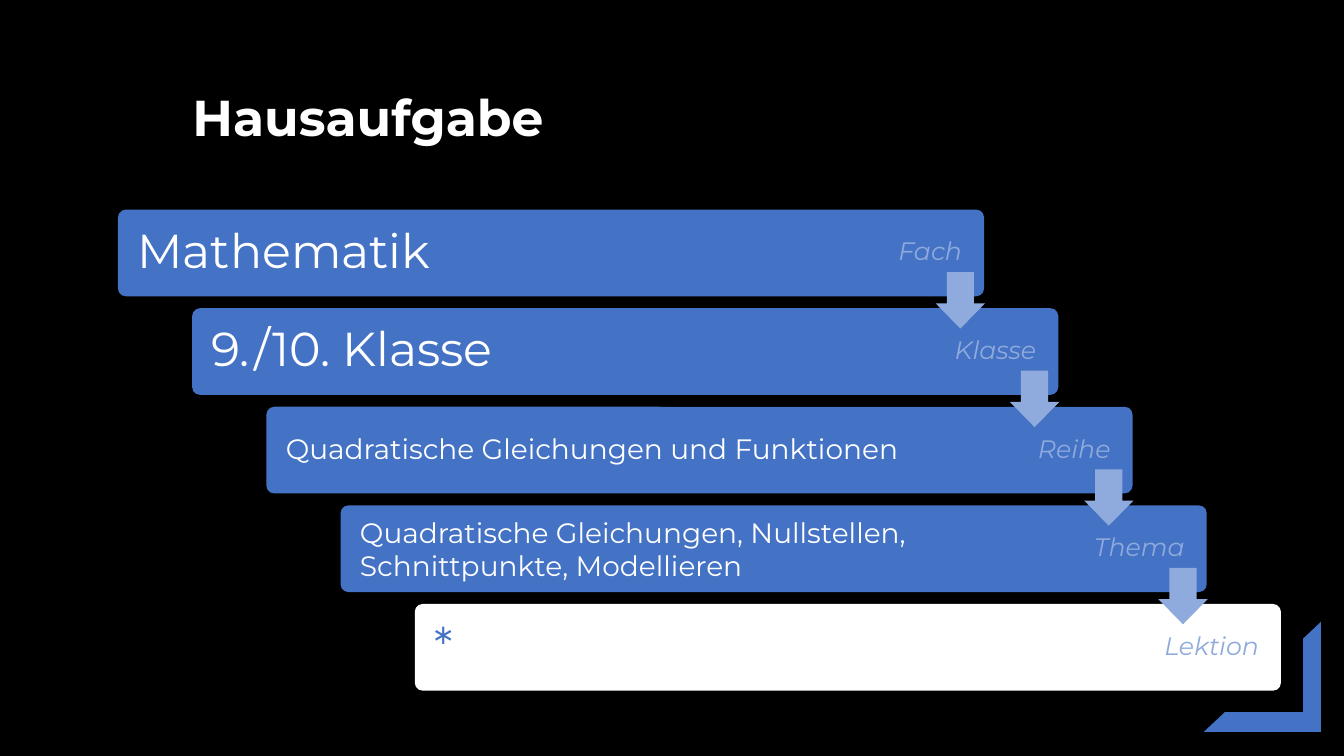
from dataclasses import dataclass

from pptx import Presentation
from pptx import util as u
from pptx.dml.color import RGBColor
from pptx.enum import shapes, text


@dataclass(frozen=True)
class Theme:
    font: str = "Montserrat"
    back: str = "000000"
    blue: str = "4472C4"
    pale: str = "8FAADC"
    white: str = "FFFFFF"
    title: int = 36
    large: int = 34
    small: int = 20
    label: int = 18


theme = Theme()
kinds = shapes.MSO_SHAPE
deck = Presentation()
deck.slide_width, deck.slide_height = u.Inches(13.33), u.Inches(7.5)
slide = deck.slides.add_slide(deck.slide_layouts[6])
slide.background.fill.solid()
slide.background.fill.fore_color.rgb = RGBColor.from_string(theme.back)


def draw(kind, box, color, adjust):
    """Add a flat filled shape without outline."""
    shape = slide.shapes.add_shape(kind, *map(u.Inches, box))
    shape.shadow.inherit = False
    shape.fill.solid()
    shape.fill.fore_color.rgb = RGBColor.from_string(color)
    shape.line.fill.background()
    for i, value in enumerate(adjust):
        shape.adjustments[i] = value
    return shape


def write(shape, words, size, color, align=text.PP_ALIGN.LEFT, bold=False, italic=False):
    frame = shape.text_frame
    frame.word_wrap = True
    para = frame.paragraphs[0]
    para.alignment = align
    run = para.add_run()
    run.text = words
    font = run.font
    font.name, font.size = theme.font, u.Pt(size)
    font.bold, font.italic = bold, italic
    font.color.rgb = RGBColor.from_string(color)
    return frame


title = slide.shapes.add_textbox(*map(u.Inches, (1.81, 0.8, 7.78, 0.71)))
write(title, "Hausaufgabe", theme.title, theme.white, bold=True)

corner = draw(kinds.HALF_FRAME, (11.94, 6.17, 1.16, 1.09), theme.blue, (0.18, 0.16))
corner.rotation = 180

# Label, words, type size, line spacing, bar colour, text colour
steps = [
    ("Fach", "Mathematik", theme.large, 0.9, theme.blue, theme.white),
    ("Klasse", "9./10. Klasse", theme.large, 0.9, theme.blue, theme.white),
    ("Reihe", "Quadratische Gleichungen und Funktionen",
     theme.small, 0.9, theme.blue, theme.white),
    ("Thema", "Quadratische Gleichungen, Nullstellen, Schnittpunkte, Modellieren",
     theme.small, 1.0, theme.blue, theme.white),
    ("Lektion", "*", theme.large, 0.9, theme.white, theme.blue),
]
right, down = 0.736, 0.978

for i, (label, words, size, space, fill, ink) in enumerate(steps):
    box = (1.17 + i * right, 2.08 + i * down, 8.59, 0.86)
    bar = draw(kinds.ROUNDED_RECTANGLE, box, fill, [0.09])
    frame = write(bar, words, size, ink)
    frame.vertical_anchor = text.MSO_ANCHOR.MIDDLE
    frame.margin_left = frame.margin_top = frame.margin_bottom = u.Inches(0.17)
    frame.margin_right = u.Inches(1.46)
    frame.paragraphs[0].line_spacing = space

for i in range(len(steps) - 1):
    box = (9.28 + i * right, 2.7 + i * down, 0.49, 0.56)
    draw(kinds.DOWN_ARROW, box, theme.pale, (0.55, 0.51))

for i, step in enumerate(steps):
    box = (7.85 + i * right, 2.29 + i * down, 1.79, 0.4)
    label = slide.shapes.add_textbox(*map(u.Inches, box))
    write(label, step[0], theme.label, theme.pale, text.PP_ALIGN.RIGHT, italic=True)

deck.save("out.pptx")
